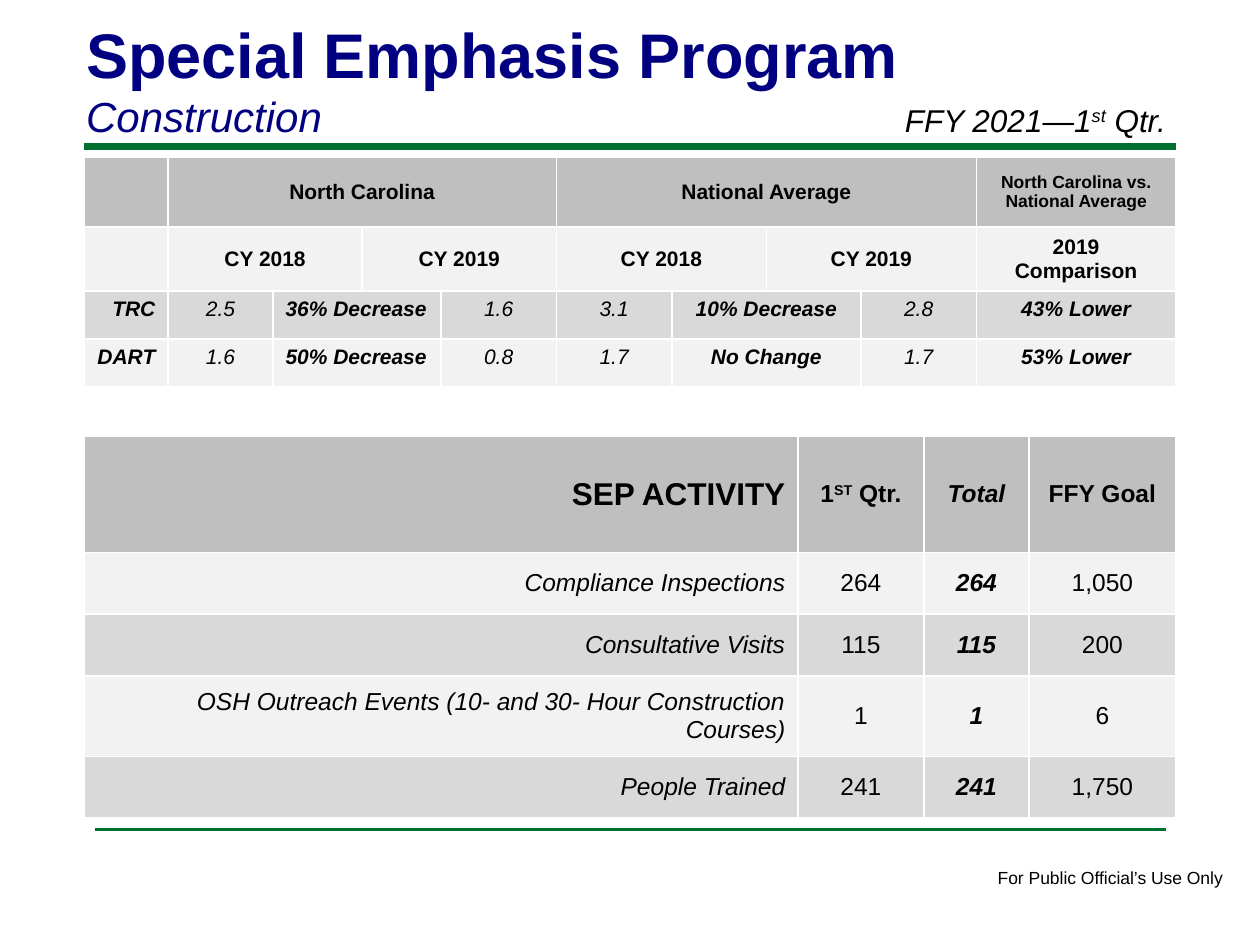
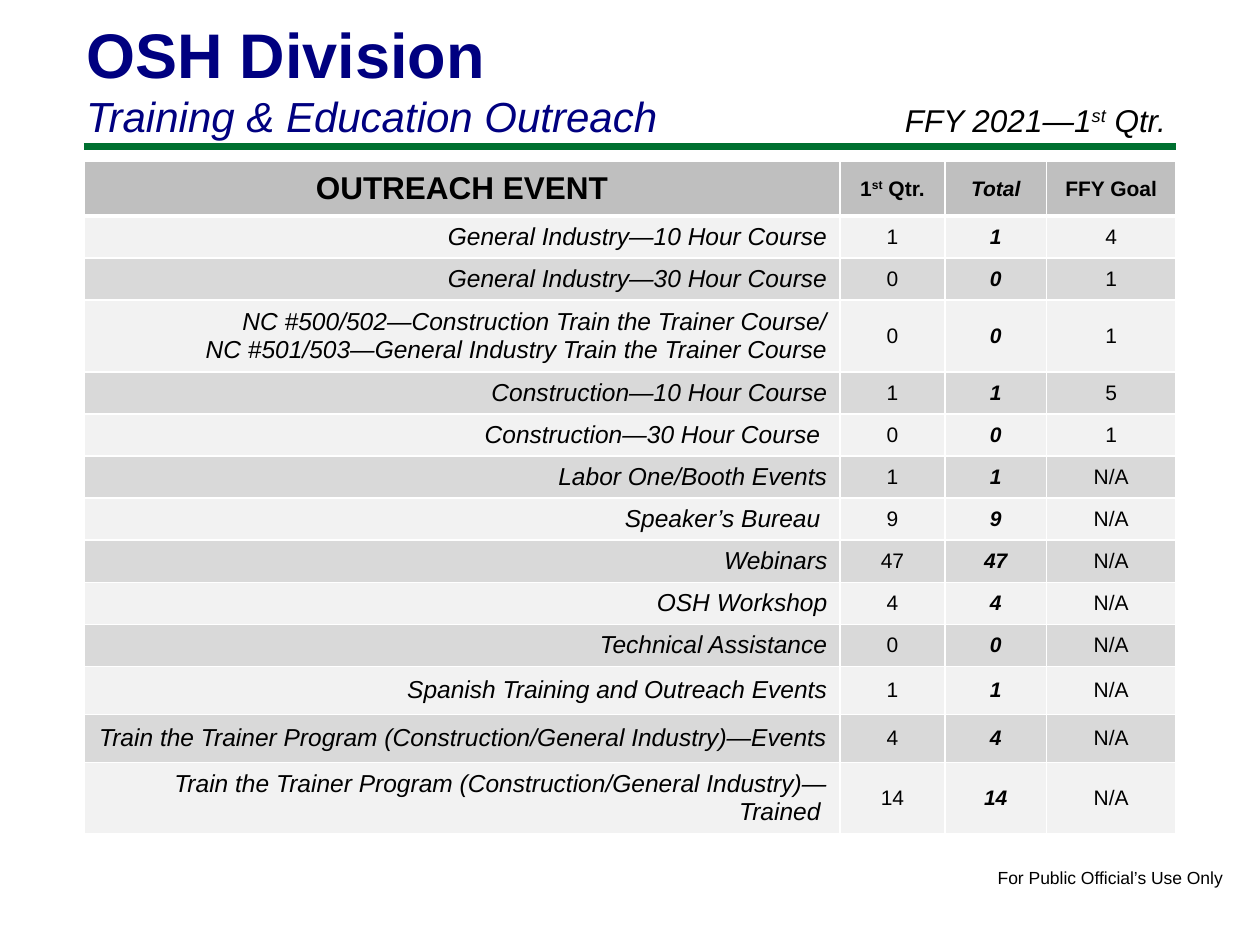
from dataclasses import dataclass
from typing import NamedTuple

from lxml import etree
from pptx import Presentation
from pptx.dml.color import RGBColor
from pptx.enum.shapes import MSO_CONNECTOR
from pptx.enum.text import MSO_ANCHOR, MSO_AUTO_SIZE, PP_ALIGN
from pptx.oxml.ns import qn
from pptx.util import Pt

LEFT, CENTER, RIGHT = PP_ALIGN.LEFT, PP_ALIGN.CENTER, PP_ALIGN.RIGHT
TOP, MIDDLE, BOTTOM = MSO_ANCHOR.TOP, MSO_ANCHOR.MIDDLE, MSO_ANCHOR.BOTTOM
STRAIGHT = MSO_CONNECTOR.STRAIGHT
NO_AUTOFIT = MSO_AUTO_SIZE.NONE
TITLE_ONLY = 5


@dataclass(frozen=True)
class Theme:
    font: str = "Arial"
    navy: str = "000080"
    green: str = "007030"
    black: str = "000000"
    white: str = "FFFFFF"
    header: str = "BFBFBF"
    bands: tuple = ("F2F2F2", "D9D9D9")
    title: int = 36
    subtitle: int = 24
    heading: int = 18
    label: int = 14
    body: int = 12
    small: int = 10


class Box(NamedTuple):
    left: float
    top: float
    width: float
    height: float = 0

    def points(self):
        return [Pt(length) for length in self]


class Style(NamedTuple):
    size: int
    bold: bool = False
    italic: bool = False
    align: int = CENTER
    color: str = "000000"


THEME = Theme()
HEADER_RULE = Box(48, 84, 624)
FOOTER_RULE = Box(54, 474, 612)
TITLE_BOX = Box(42, 4.3, 594, 80)
PERIOD_BOX = Box(510, 54, 180, 29)
NOTICE_BOX = Box(563, 491.8, 145, 19.4)

RATE_COLUMNS = [48, 60, 51, 45, 66, 66, 54, 54, 66, 114]
RATE_ROWS = [39.7, 36.6, 27.5, 27.5]
RATE_HEADERS = [
    [(0, 1, ""), (1, 4, "North Carolina"), (5, 4, "National Average"),
     (9, 1, "North Carolina vs. National Average")],
    [(0, 1, ""), (1, 2, "CY 2018"), (3, 2, "CY 2019"), (5, 2, "CY 2018"),
     (7, 2, "CY 2019"), (9, 1, "2019 Comparison")],
]
RATE_SPANS = [(0, 1), (1, 1), (2, 2), (4, 1), (5, 1), (6, 2), (8, 1), (9, 1)]
RATES = [
    ["TRC", "2.5", "36% Decrease", "1.6", "3.1", "10% Decrease", "2.8", "43% Lower"],
    ["DART", "1.6", "50% Decrease", "0.8", "1.7", "No Change", "1.7", "53% Lower"],
]

SEP_HEADERS = ["SEP ACTIVITY", "1^ST^ Qtr.", "Total", "FFY Goal"]
SEP_ACTIVITIES = [
    ("Compliance Inspections", "264", "1,050"),
    ("Consultative Visits", "115", "200"),
    ("OSH Outreach Events (10- and 30- Hour Construction Courses)", "1", "6"),
    ("People Trained", "241", "1,750"),
]

OUTREACH_HEADERS = ["OUTREACH EVENT", "1^st^ Qtr.", "Total", "FFY Goal"]
OUTREACH_EVENTS = [
    ("General Industry—10 Hour Course", "1", "4"),
    ("General Industry—30 Hour Course", "0", "1"),
    ("NC #500/502—Construction Train the Trainer Course/\n"
     "NC #501/503—General Industry Train the Trainer Course", "0", "1"),
    ("Construction—10 Hour Course", "1", "5"),
    ("Construction—30 Hour Course ", "0", "1"),
    ("Labor One/Booth Events", "1", "N/A"),
    ("Speaker’s Bureau ", "9", "N/A"),
    ("Webinars", "47", "N/A"),
    ("OSH Workshop", "4", "N/A"),
    ("Technical Assistance", "0", "N/A"),
    ("Spanish Training and Outreach Events", "1", "N/A"),
    ("Train the Trainer Program (Construction/General Industry)—Events", "4", "N/A"),
    ("Train the Trainer Program (Construction/General Industry)—Trained ", "14", "N/A"),
]


def write_paragraph(paragraph, text, style):
    for index, piece in enumerate(text.split("^")):
        run = paragraph.add_run()
        run.text = piece
        if index % 2:
            run._r.get_or_add_rPr().set("baseline", "30000")
    paragraph.alignment = style.align
    font = paragraph.font
    font.name = THEME.font
    font.size = Pt(style.size)
    font.bold = style.bold
    font.italic = style.italic
    font.color.rgb = RGBColor.from_string(style.color)


def write_lines(frame, lines):
    for index, (text, style) in enumerate(lines):
        paragraph = frame.add_paragraph() if index else frame.paragraphs[0]
        write_paragraph(paragraph, text, style)


def add_label(slide, box, text, style, wrap=True):
    frame = slide.shapes.add_textbox(*box.points()).text_frame
    frame.word_wrap = wrap
    write_lines(frame, [(text, style)])


def add_rule(slide, box, weight):
    left, top, width, _ = box.points()
    rule = slide.shapes.add_connector(STRAIGHT, left, top, left + width, top)
    rule.line.color.rgb = RGBColor.from_string(THEME.green)
    rule.line.width = Pt(weight)
    etree.SubElement(rule._element.spPr, qn("a:effectLst"))


def add_report_slide(deck, title, subtitle):
    slide = deck.slides.add_slide(deck.slide_layouts[TITLE_ONLY])
    add_rule(slide, HEADER_RULE, 4)
    add_rule(slide, FOOTER_RULE, 2)
    add_label(slide, NOTICE_BOX, "For Public Official’s Use Only",
              Style(THEME.small, align=LEFT), wrap=False)
    heading = slide.shapes.title
    heading.left, heading.top, heading.width, heading.height = TITLE_BOX.points()
    frame = heading.text_frame
    frame.auto_size = NO_AUTOFIT
    frame.vertical_anchor = BOTTOM
    write_lines(frame, [
        (title, Style(THEME.title, bold=True, align=LEFT, color=THEME.navy)),
        (subtitle, Style(THEME.subtitle, italic=True, align=LEFT, color=THEME.navy)),
    ])
    add_label(slide, PERIOD_BOX, "FFY 2021—1^st^ Qtr.",
              Style(THEME.heading, italic=True, align=LEFT))
    return slide


def set_borders(cell, bottom):
    properties = cell._tc.get_or_add_tcPr()
    for side, weight in (("L", 1), ("R", 1), ("T", 1), ("B", bottom)):
        line = etree.SubElement(properties, qn(f"a:ln{side}"), w=str(Pt(weight)))
        fill = etree.SubElement(line, qn("a:solidFill"))
        etree.SubElement(fill, qn("a:srgbClr"), val=THEME.white)


def add_grid(slide, box, columns, rows, header_border=1):
    grid = slide.shapes.add_table(len(rows), len(columns), *box.points()).table
    grid.first_row = grid.horz_banding = False
    for column, width in zip(grid.columns, columns):
        column.width = Pt(width)
    for index, (row, height) in enumerate(zip(grid.rows, rows)):
        row.height = Pt(height)
        color = THEME.bands[(index - 1) % 2] if index else THEME.header
        for cell in row.cells:
            set_borders(cell, 1 if index else header_border)
            cell.fill.solid()
            cell.fill.fore_color.rgb = RGBColor.from_string(color)
    return grid


def fill_cell(cell, text, style, anchor=MIDDLE):
    cell.vertical_anchor = anchor
    write_lines(cell.text_frame, [(line, style) for line in text.split("\n")])


def fill_span(grid, row, column, span, text, style, anchor=MIDDLE):
    cell = grid.cell(row, column)
    if span > 1:
        cell.merge(grid.cell(row, column + span - 1))
    if text:
        fill_cell(cell, text, style, anchor)


def add_rate_table(slide, box):
    grid = add_grid(slide, box, RATE_COLUMNS, RATE_ROWS)
    for row, headers in enumerate(RATE_HEADERS):
        for column, span, text in headers:
            size = THEME.small if (row, column) == (0, 9) else THEME.body
            fill_span(grid, row, column, span, text, Style(size, bold=True))
    aligns = {0: RIGHT, 2: LEFT}
    emphasized = (0, 2, 6, 9)
    for row, rates in enumerate(RATES, len(RATE_HEADERS)):
        for (column, span), text in zip(RATE_SPANS, rates):
            style = Style(THEME.body, column in emphasized, True,
                          aligns.get(column, CENTER))
            fill_span(grid, row, column, span, text, style, TOP)


def add_activity_table(slide, box, columns, rows, headers, activities,
                       figure_size, heading_align, header_border=1):
    grid = add_grid(slide, box, columns, rows, header_border)
    header_styles = [
        Style(THEME.heading, bold=True, align=heading_align),
        Style(figure_size, bold=True),
        Style(figure_size, bold=True, italic=True),
        Style(figure_size, bold=True),
    ]
    figure = Style(figure_size)
    activity_styles = [
        Style(THEME.label, italic=True, align=RIGHT),
        figure,
        Style(figure_size, bold=True, italic=True),
        figure,
    ]
    for column, (text, style) in enumerate(zip(headers, header_styles)):
        fill_cell(grid.cell(0, column), text, style)
    for row, (activity, quarter, goal) in enumerate(activities, 1):
        texts = (activity, quarter, quarter, goal)
        for column, (text, style) in enumerate(zip(texts, activity_styles)):
            fill_cell(grid.cell(row, column), text, style)


def add_construction_slide(deck):
    slide = add_report_slide(deck, "Special Emphasis Program", "Construction")
    add_activity_table(
        slide, Box(48, 249.4, 624, 218.4), [408, 72, 60, 84],
        [66.2, 35.3, 35.3, 46, 35.3], SEP_HEADERS, SEP_ACTIVITIES,
        THEME.label, RIGHT)
    add_rate_table(slide, Box(48, 90, 624, 131.3))


def add_outreach_slide(deck):
    slide = add_report_slide(deck, "OSH Division", "Training & Education Outreach")
    rows = [31.2, 24, 24, 41] + [24] * 7 + [27.4, 27.4, 40.3]
    add_activity_table(
        slide, Box(48, 92.3, 624, sum(rows)), [432, 60, 58, 74], rows,
        OUTREACH_HEADERS, OUTREACH_EVENTS, THEME.body, CENTER, header_border=3)


def main():
    deck = Presentation()
    deck.slide_width, deck.slide_height = Pt(720), Pt(540)
    add_construction_slide(deck)
    add_outreach_slide(deck)
    deck.save("out.pptx")


if __name__ == "__main__":
    main()
